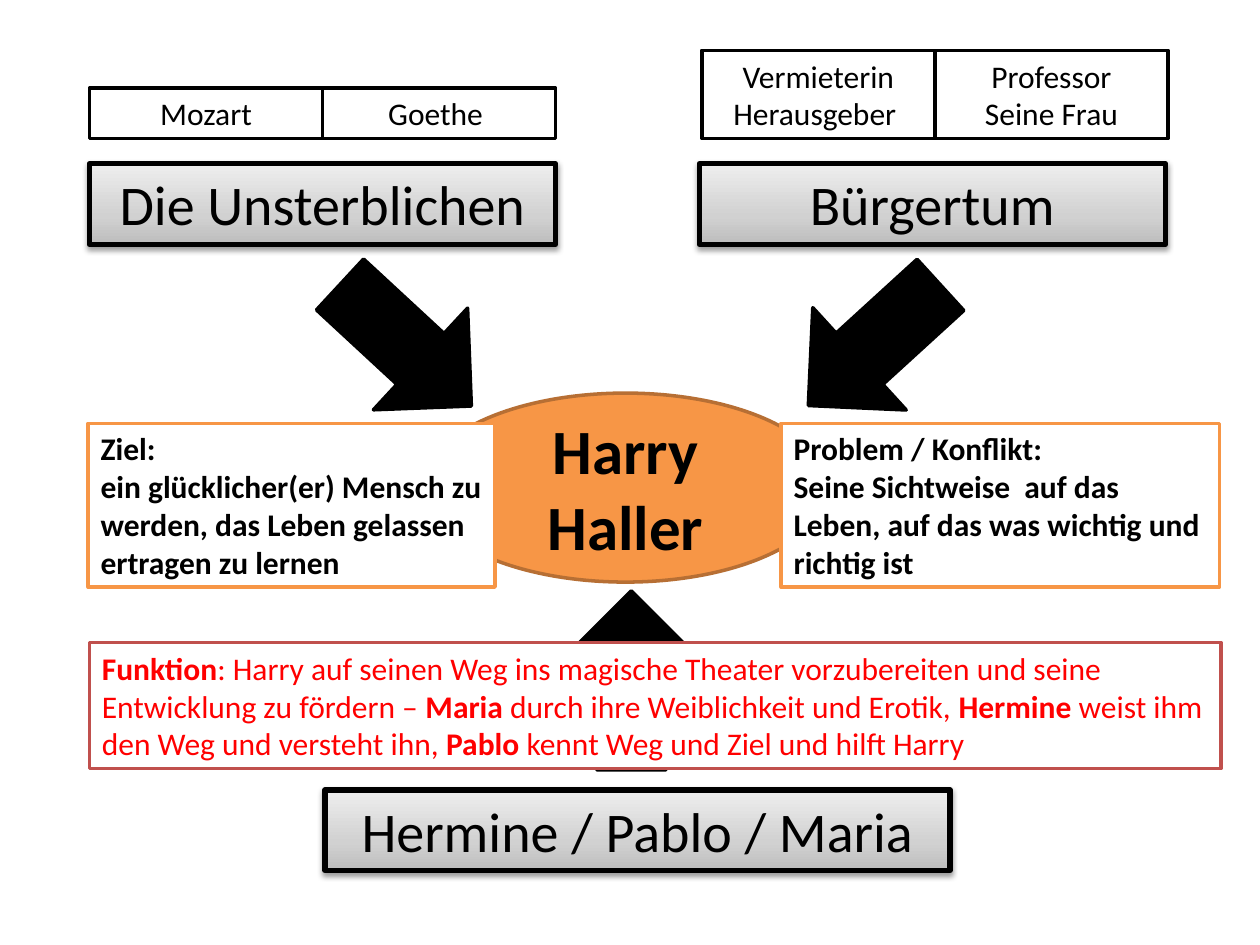
from copy import deepcopy

from lxml.etree import SubElement
from pptx import Presentation
from pptx.dml.color import RGBColor
from pptx.enum.shapes import MSO_SHAPE
from pptx.enum.text import MSO_ANCHOR, MSO_AUTO_SIZE, PP_ALIGN
from pptx.oxml.ns import qn
from pptx.util import Inches, Pt

BLACK, WHITE, RED, ORANGE = "000000", "FFFFFF", "FF0000", "F79646"
BROWN, CRIMSON = "B76F34", "C0504D"
GREYS = [(0, "BDBDBD"), (0.35, "D1D1D1"), (1, "EEEEEE")]

SLIDE_WIDTH, SLIDE_HEIGHT = 10, 7.5
MARGIN = 0.71
MEMBER_WIDTH, MEMBER_BOTTOM = 1.85, 1.1
TITLE_HEIGHT, TITLE_TOP = 0.64, 1.3
LINE_HEIGHT, PADDING = 0.3, 0.1
ARROW_WIDTH, ARROW_HEIGHT = 1.1, 1.42

HERO = "Harry Haller"
GROUPS = [
    ("Die Unsterblichen", MARGIN, MARGIN, [["Mozart"], ["Goethe "]]),
    ("Bürgertum", 5.55, 5.57,
     [["Vermieterin", "Herausgeber "], ["Professor", "Seine Frau"]]),
]
HELPERS = "Hermine / Pablo / Maria"
ARROWS = [(2.67, 2.03, 312.8), (6.39, 2.03, 47.6), (4.46, 4.69, 180)]
NOTES = [
    (MARGIN, 5.1, 8.98, 3, CRIMSON, RED, [[
        ("Funktion", True),
        (": Harry auf seinen Weg ins magische Theater vorzubereiten und seine "
         "Entwicklung zu fördern – ", False),
        ("Maria", True),
        (" durch ihre Weiblichkeit und Erotik, ", False),
        ("Hermine", True),
        (" weist ihm den Weg und versteht ihn, ", False),
        ("Pablo ", True),
        ("kennt Weg und Ziel und hilft Harry", False)]]),
    (0.7, 3.36, 3.23, 4, ORANGE, BLACK, [
        [("Ziel:", True)],
        [("ein glücklicher(er) Mensch zu werden, das Leben gelassen "
          "ertragen zu lernen", True)]]),
    (6.2, 3.36, 3.48, 4, ORANGE, BLACK, [
        [("Problem / Konflikt:", True)],
        [("Seine Sichtweise  auf das Leben, auf das was wichtig und "
          "richtig ist", True)]]),
]


def rgb(color):
    return RGBColor.from_string(color)


def text_height(lines):
    return lines * LINE_HEIGHT + PADDING


def add_figure(slide, kind, left, top, width, height, fill, line, weight=2):
    figure = slide.shapes.add_shape(
        kind, Inches(left), Inches(top), Inches(width), Inches(height))
    figure.shadow.inherit = False
    figure.fill.solid()
    figure.fill.fore_color.rgb = rgb(fill)
    figure.line.color.rgb = rgb(line)
    figure.line.width = Pt(weight)
    return figure


def write(figure, paragraphs, size=18, color=BLACK,
          align=PP_ALIGN.CENTER, anchor=MSO_ANCHOR.TOP):
    frame = figure.text_frame
    frame.word_wrap = True
    frame.vertical_anchor = anchor
    if anchor == MSO_ANCHOR.TOP:
        frame.auto_size = MSO_AUTO_SIZE.SHAPE_TO_FIT_TEXT
    for index, runs in enumerate(paragraphs):
        paragraph = frame.add_paragraph() if index else frame.paragraphs[0]
        paragraph.alignment = align
        for words, bold in runs:
            run = paragraph.add_run()
            run.text = words
            run.font.name = "Calibri"
            run.font.size = Pt(size)
            run.font.bold = bold
            run.font.color.rgb = rgb(color)


def shade(figure):
    figure.fill.gradient()
    figure.fill.gradient_angle = 90
    stop_list = figure.fill.gradient_stops[0]._gs.getparent()
    stop_list.append(deepcopy(stop_list[-1]))
    for stop, (position, color) in zip(figure.fill.gradient_stops, GREYS):
        stop.position = position
        stop.color.rgb = rgb(color)


def cast_shadow(figure):
    effects = figure._element.spPr.find(qn("a:effectLst"))
    shadow = SubElement(
        effects, qn("a:outerShdw"), blurRad=str(Pt(3.1)), dist=str(Pt(1.6)),
        dir="5400000", rotWithShape="0")
    color = SubElement(shadow, qn("a:srgbClr"), val=BLACK)
    SubElement(color, qn("a:alpha"), val="38000")


def add_title(slide, title, left, top, width):
    box = add_figure(slide, MSO_SHAPE.RECTANGLE, left, top, width,
                     TITLE_HEIGHT, WHITE, BLACK, 3)
    shade(box)
    cast_shadow(box)
    write(box, [[(title, False)]], size=32)


def main():
    deck = Presentation()
    deck.slide_width, deck.slide_height = Inches(SLIDE_WIDTH), Inches(SLIDE_HEIGHT)
    slide = deck.slides.add_slide(deck.slide_layouts[6])

    hero = add_figure(slide, MSO_SHAPE.OVAL, 3.35, 3.12, 3.23, 1.5, ORANGE, BROWN)
    write(hero, [[(HERO, True)]], size=36, anchor=MSO_ANCHOR.MIDDLE)

    for title, title_left, members_left, members in GROUPS:
        add_title(slide, title, title_left, TITLE_TOP, len(members) * MEMBER_WIDTH)
        for column, names in enumerate(members):
            height = text_height(len(names))
            member = add_figure(
                slide, MSO_SHAPE.RECTANGLE, members_left + column * MEMBER_WIDTH,
                MEMBER_BOTTOM - height, MEMBER_WIDTH, height, WHITE, BLACK)
            write(member, [[(name, False)] for name in names])
    add_title(slide, HELPERS, 2.58, 6.27, 4.96)

    for left, top, angle in ARROWS:
        arrow = add_figure(slide, MSO_SHAPE.DOWN_ARROW, left, top,
                           ARROW_WIDTH, ARROW_HEIGHT, BLACK, BLACK)
        arrow.rotation = angle

    for left, top, width, lines, border, color, paragraphs in NOTES:
        note = add_figure(slide, MSO_SHAPE.RECTANGLE, left, top, width,
                          text_height(lines), WHITE, border)
        write(note, paragraphs, color=color, align=PP_ALIGN.LEFT)

    deck.save("out.pptx")


if __name__ == "__main__":
    main()
